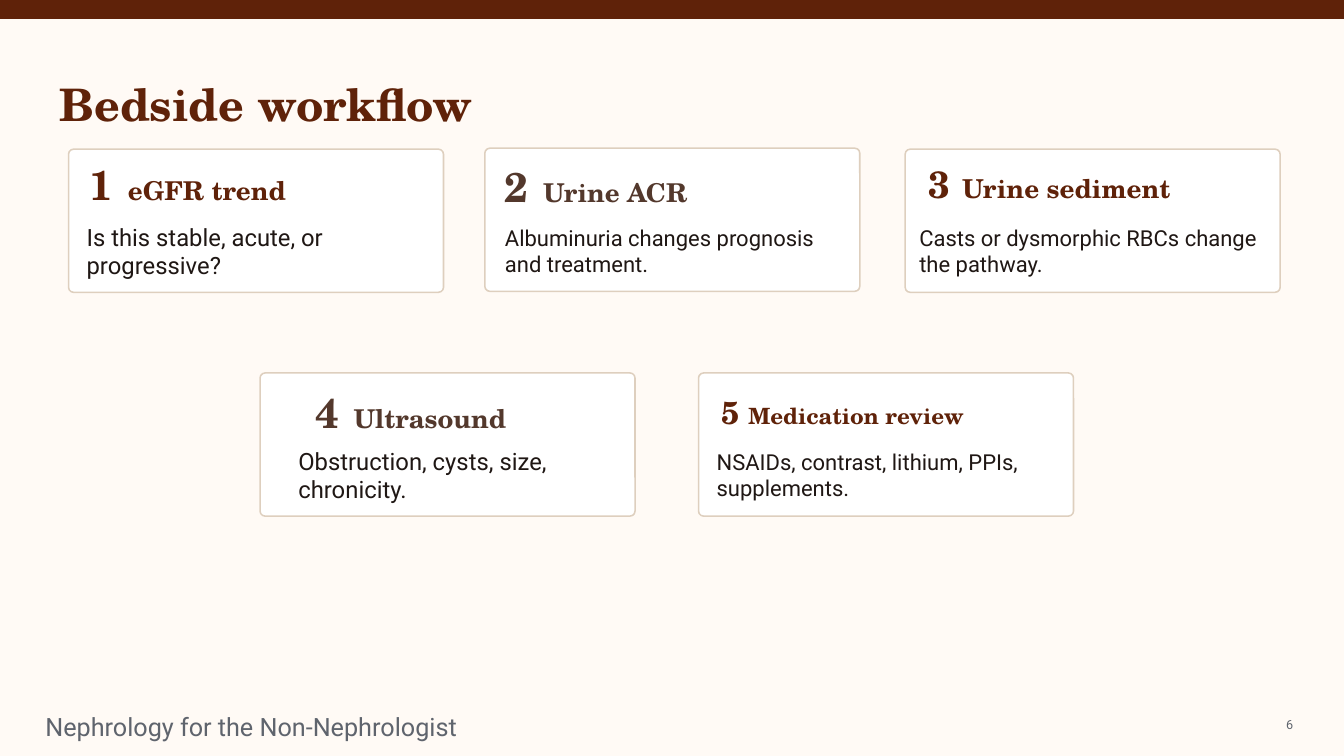
from dataclasses import dataclass

from lxml.etree import SubElement
from pptx import Presentation
from pptx.dml.color import RGBColor
from pptx.enum.shapes import MSO_SHAPE as Kind
from pptx.enum.text import MSO_ANCHOR as Anchor
from pptx.enum.text import MSO_AUTO_SIZE as Fit
from pptx.enum.text import PP_ALIGN as Align
from pptx.oxml.ns import qn
from pptx.util import Pt

HEX = {
    "page": "FFFAF5", "rust": "5F2209", "brown": "53382C", "ink": "1F1714",
    "gray": "5F646D", "card": "FFFFFF", "edge": "DECFBE",
}
SERIF, SANS = "TeX Gyre Schola", "Roboto"
CARD_W, CARD_H = 267.84, 102.24
HEAD_H, BODY_H = 30.24, 37.44


@dataclass
class Step:
    """A card; head and body give text offsets from its corner."""
    left: float
    top: float
    head: tuple[float, float]
    body: tuple[float, float]
    label: str
    note: str
    color: str = "rust"
    num_size: float = 29.6
    size: float = 18.5
    note_size: float = 15.7
    tab: float = 27.3
    head_w: float = 177.84
    body_w: float = 240.48


STEPS = [
    Step(48.96, 106.56, (15.12, 9.36), (12.96, 54), "eGFR trend",
         "Is this stable, acute, or progressive?", note_size=17),
    Step(346.32, 105.84, (14.4, 11.52), (14.4, 54.72), "Urine ACR",
         "Albuminuria changes prognosis and treatment.", "brown"),
    Step(646.56, 106.56, (16.56, 9.36), (10.08, 54), "Urine sediment",
         "Casts or dysmorphic RBCs change the pathway.",
         num_size=27.1, size=18.6, tab=24.2, body_w=243.36),
    Step(185.76, 266.4, (39.6, 12.96), (27.36, 54), "Ultrasound",
         "Obstruction, cysts, size, chronicity.", "brown", note_size=17),
    Step(498.96, 266.4, (16.56, 12.96), (12.96, 54), "Medication review",
         "NSAIDs, contrast, lithium, PPIs, supplements.",
         num_size=22.6, size=16, tab=19.1, head_w=192.24),
]


def rgb(name: str) -> RGBColor:
    return RGBColor.from_string(HEX[name])


def style(font, face: str, color: str, size: float | None = None,
          bold: bool = False) -> None:
    font.name, font.bold = face, bold
    font.color.rgb = rgb(color)
    if size:
        font.size = Pt(size)


def set_up(shape, align=Align.LEFT):
    """Clear the margins and return the first paragraph."""
    frame = shape.text_frame
    frame.word_wrap, frame.auto_size = True, Fit.NONE
    frame.vertical_anchor = Anchor.MIDDLE
    frame.margin_left = frame.margin_right = 0
    frame.margin_top = frame.margin_bottom = 0
    para = frame.paragraphs[0]
    para.alignment = align
    return para


def add_box(slide, left: float, top: float, width: float, height: float,
            align=Align.LEFT):
    box = slide.shapes.add_textbox(Pt(left), Pt(top), Pt(width), Pt(height))
    return set_up(box, align)


def add_form(slide, kind, left: float, top: float, width: float,
             height: float, fill: str, line: str, weight: float):
    form = slide.shapes.add_shape(kind, Pt(left), Pt(top), Pt(width), Pt(height))
    form.shadow.inherit = False
    form.fill.solid()
    form.fill.fore_color.rgb = rgb(fill)
    form.line.color.rgb = rgb(line)
    form.line.width = Pt(weight)
    return form


def add_step(slide, num: int, step: Step) -> None:
    card = add_form(slide, Kind.ROUNDED_RECTANGLE, step.left, step.top,
                    CARD_W, CARD_H, "card", "edge", 1.1)
    card.adjustments[0] = 0.035

    # Number and label, set apart by a tab stop
    head = add_box(slide, step.left + step.head[0], step.top + step.head[1],
                   step.head_w, HEAD_H)
    tabs = SubElement(head._p.get_or_add_pPr(), qn("a:tabLst"))
    SubElement(tabs, qn("a:tab"), pos=str(int(Pt(step.tab))), algn="l")
    style(head.font, SERIF, step.color, bold=True)
    for text, size in ((str(num), step.num_size), (f"\t{step.label}", step.size)):
        run = head.add_run()
        run.text = text
        run.font.size = Pt(size)

    # Explanation
    body = add_box(slide, step.left + step.body[0], step.top + step.body[1],
                   step.body_w, BODY_H)
    body.text = step.note
    style(body.font, SANS, "ink", step.note_size)


def main() -> None:
    deck = Presentation()
    deck.slide_width, deck.slide_height = Pt(960), Pt(540)
    slide = deck.slides.add_slide(deck.slide_layouts[5])
    slide.background.fill.solid()
    slide.background.fill.fore_color.rgb = rgb("page")

    # Top band
    add_form(slide, Kind.RECTANGLE, 0, 0, 960, 12.96, "rust", "rust", 1)

    # Title
    title = slide.shapes.title
    title.left, title.top = Pt(42.48), Pt(48.24)
    title.width, title.height = Pt(864), Pt(51.84)
    para = set_up(title)
    para.text = "Bedside workflow"
    style(para.font, SERIF, "rust", 32, True)

    # Cards
    for num, step in enumerate(STEPS, 1):
        add_step(slide, num, step)

    # Footer and page number
    foot = add_box(slide, 32.4, 512.64, 309.6, 12.96)
    foot.text = "Nephrology for the Non-Nephrologist"
    style(foot.font, SANS, "gray", 18)
    page = add_box(slide, 889.2, 509.76, 34.56, 15.84, Align.RIGHT)
    page.text = "6"
    style(page.font, SANS, "gray", 9)

    deck.save("out.pptx")


if __name__ == "__main__":
    main()
